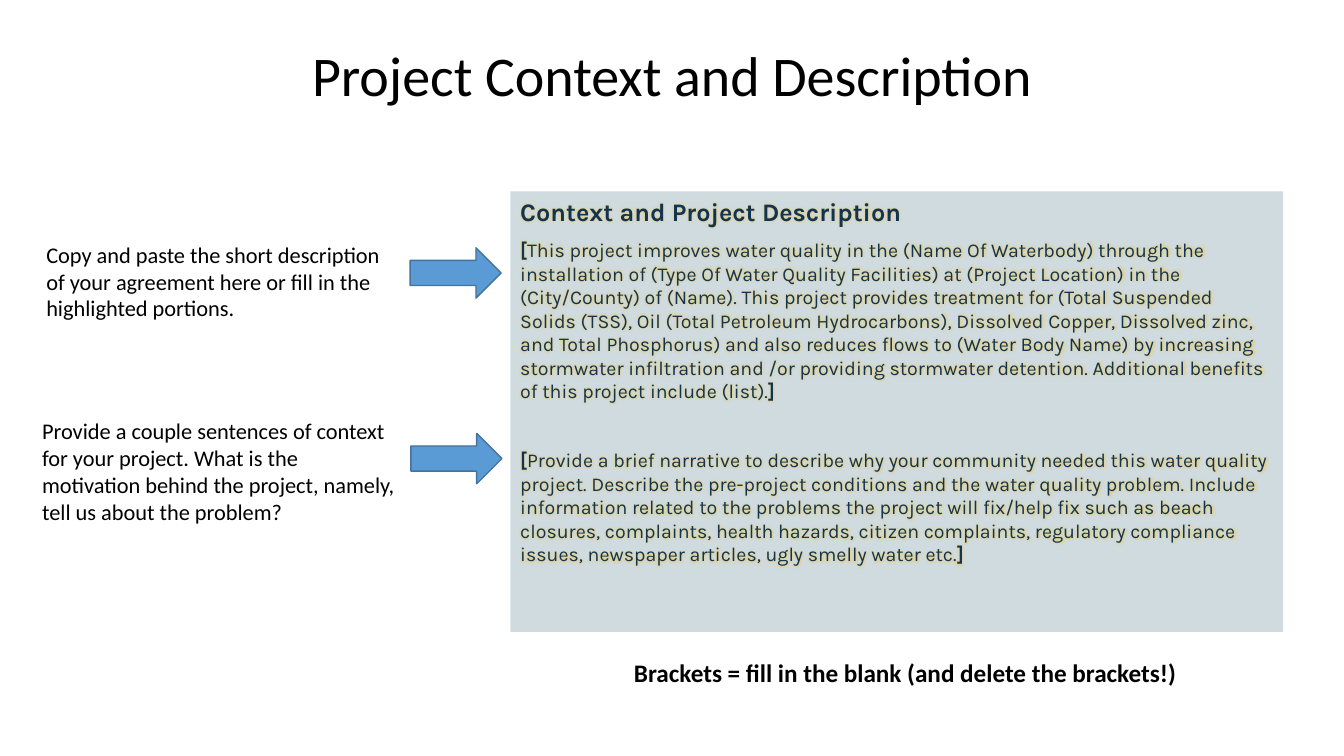
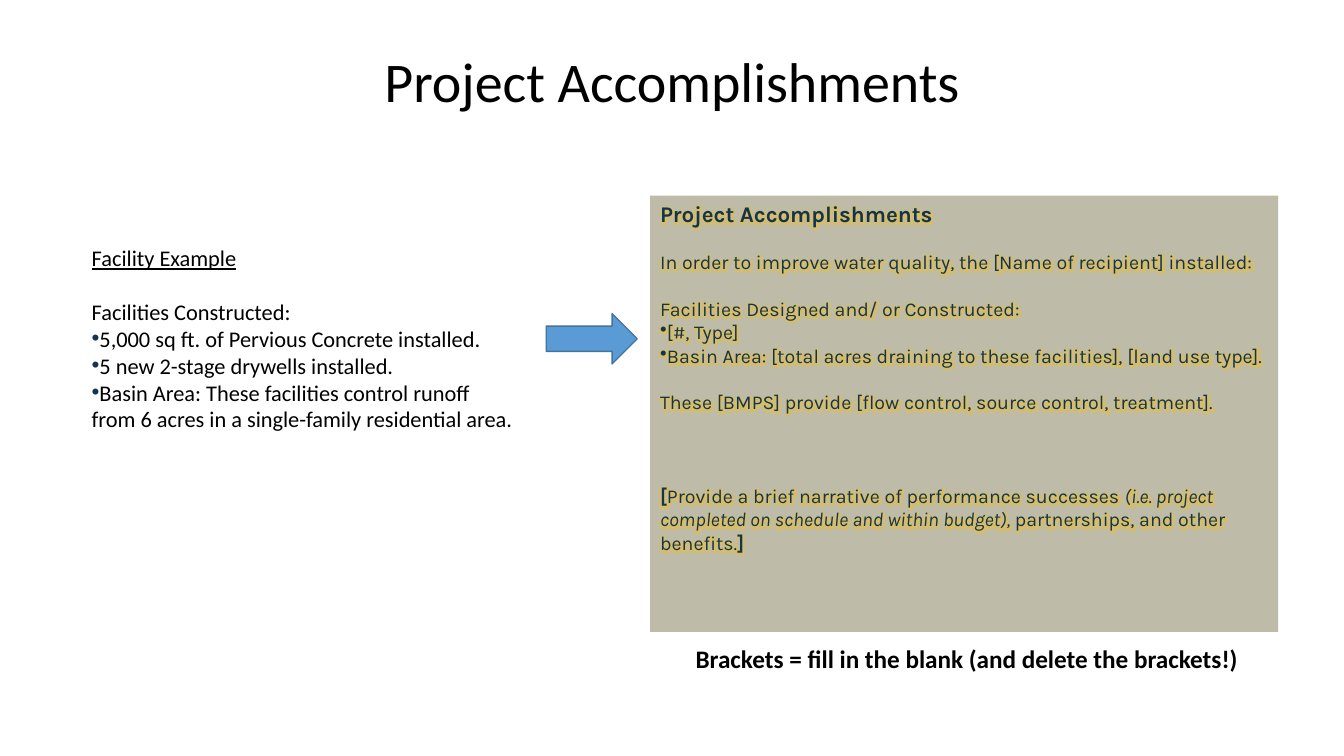
from lxml import etree
from pptx import Presentation
from pptx.dml.color import RGBColor
from pptx.enum.shapes import MSO_SHAPE as SHAPE
from pptx.enum.text import MSO_ANCHOR as ANCHOR, PP_ALIGN as ALIGN
from pptx.oxml import parse_xml
from pptx.oxml.ns import nsdecls, qn
from pptx.util import Pt

COLORS = {
    "text": "000000",
    "navy": "123452",
    "arrow": "5B9BD5",
    "arrow_line": "43739E",
    "glow": "FFC000",
    "blue_panel": "D0DBE0",
    "olive_panel": "BEBCA9",
}
GLOW = (f'<a:effectLst {nsdecls("a")}><a:glow rad="{Pt(5)}"><a:srgbClr val="{COLORS["glow"]}">'
        '<a:alpha val="40000"/></a:srgbClr></a:glow></a:effectLst>')
NOTE = dict(size=16)
PANEL = dict(size=14, font="Karla", color="navy", glow=True)


def rgb(name):
    return RGBColor.from_string(COLORS[name])


def add_para(tf, text, size=16, font="Calibri", color="text", bold=False, underline=False,
             align=ALIGN.LEFT, before=0, after=0, spacing=1.0, bullet=False, glow=False):
    """Add a paragraph; text is a string or a list of (text, style) with style "", "b" or "i"."""
    p = tf.paragraphs[0] if not tf.paragraphs[0].runs else tf.add_paragraph()
    p.alignment, p.line_spacing = align, spacing
    p.space_before, p.space_after = Pt(before), Pt(after)
    pPr = p._p.get_or_add_pPr()
    pPr.set("marL", "0")
    pPr.set("indent", "0")
    if bullet:
        clr = etree.SubElement(pPr, qn("a:buClr"))
        etree.SubElement(clr, qn("a:srgbClr"), val=COLORS["navy"])
        etree.SubElement(pPr, qn("a:buChar"), char="•")
    else:
        etree.SubElement(pPr, qn("a:buNone"))
    parts = [(text, "b" if bold else "")] if isinstance(text, str) else text
    for part, style in parts:
        r = p.add_run()
        r.text = part
        r.font.size, r.font.name = Pt(size), font
        r.font.bold, r.font.italic = style == "b", style == "i"
        r.font.underline = underline
        r.font.color.rgb = rgb(color)
        if glow:
            r.font._element.find(qn("a:solidFill")).addnext(parse_xml(GLOW))


prs = Presentation()
prs.slide_width, prs.slide_height = Pt(960), Pt(540)

# What differs between the slides: layout, title, panel, arrows, caption place
pages = [
    dict(layout=5, title="Project Context and Description", title_top=3.6,
         panel=(364.5, 136.8, 552, 314.6), fill="blue_panel",
         arrows=[(293, 177), (293.5, 309.6)], caption=(444, 466)),
    dict(layout=1, title="Project Accomplishments", title_top=8,
         panel=(464.4, 139.7, 448.6, 311.7), fill="olive_panel",
         arrows=[(390.2, 224)], caption=(488, 455.8)),
]

# Shared parts
slides, panels = [], []
for page in pages:
    s = prs.slides.add_slide(prs.slide_layouts[page["layout"]])
    slides.append(s)

    title = s.shapes.title
    title.left, title.top, title.width, title.height = Pt(66), Pt(page["title_top"]), Pt(828), Pt(104.4)
    title.text_frame.vertical_anchor = ANCHOR.MIDDLE
    add_para(title.text_frame, page["title"], size=40, align=ALIGN.CENTER, spacing=0.9)

    panel = s.shapes.add_shape(SHAPE.RECTANGLE, *map(Pt, page["panel"]))
    panel.shadow.inherit = False
    panel.fill.solid()
    panel.fill.fore_color.rgb = rgb(page["fill"])
    panel.line.fill.background()
    panel.text_frame.word_wrap = True
    panel.text_frame.vertical_anchor = ANCHOR.TOP
    panels.append(panel.text_frame)

    for x, y in page["arrows"]:
        arrow = s.shapes.add_shape(SHAPE.RIGHT_ARROW, Pt(x), Pt(y), Pt(65), Pt(36))
        arrow.shadow.inherit = False
        arrow.fill.solid()
        arrow.fill.fore_color.rgb = rgb("arrow")
        arrow.line.color.rgb = rgb("arrow_line")
        arrow.line.width = Pt(1)

    x, y = page["caption"]
    caption = s.shapes.add_textbox(Pt(x), Pt(y), Pt(405.4), Pt(29))
    caption.text_frame.word_wrap = False
    add_para(caption.text_frame, "Brackets = fill in the blank (and delete the brackets!)",
             size=18, bold=True, align=ALIGN.CENTER)

# Context slide: panel text
tf = panels[0]
add_para(tf, "Context and Project Description", **PANEL | dict(size=18, bold=True, after=8))
add_para(tf, [
    ("[", "b"),
    ("This project improves water quality in the (Name Of Waterbody) through the installation of "
     "(Type Of Water Quality Facilities) at (Project Location) in the (City/County) of (Name). "
     "This project provides treatment for (Total Suspended Solids (TSS), Oil (Total Petroleum "
     "Hydrocarbons), Dissolved Copper, Dissolved zinc, and Total Phosphorus) and also reduces "
     "flows to (Water Body Name) by increasing stormwater infiltration and /or providing "
     "stormwater detention. Additional benefits of this project include (list).", ""),
    ("]", "b")], after=32.4, **PANEL)
add_para(tf, [
    ("[", "b"),
    ("Provide a brief narrative to describe why your community needed this water quality project. "
     "Describe the pre-project conditions and the water quality problem. Include information "
     "related to the problems the project will fix/help fix such as beach closures, complaints, "
     "health hazards, citizen complaints, regulatory compliance issues, newspaper articles, "
     "ugly smelly water etc.", ""),
    ("]", "b")], **PANEL)

# Context slide: instructions beside the arrows
instructions = [
    (26, 168.5, 264.2, 65.5, "Copy and paste the short description of your agreement here or "
     "fill in the highlighted portions."),
    (23, 294.5, 270, 85, "Provide a couple sentences of context for your project. What is the "
     "motivation behind the project, namely, tell us about the problem?"),
]
for x, y, w, h, text in instructions:
    box = slides[0].shapes.add_textbox(Pt(x), Pt(y), Pt(w), Pt(h))
    box.text_frame.word_wrap = True
    add_para(box.text_frame, text, **NOTE)

# Accomplishments slide: panel text
tf = panels[1]
add_para(tf, "Project Accomplishments", **PANEL | dict(size=16, bold=True, after=16.4))
add_para(tf, "In order to improve water quality, the [Name of recipient] installed:", after=16.4, **PANEL)
add_para(tf, "Facilities Designed and/ or Constructed:", **PANEL)
add_para(tf, "[#, Type]", bullet=True, **PANEL)
add_para(tf, "Basin Area: [total acres draining to these facilities], [land use type].",
         bullet=True, after=16.4, **PANEL)
add_para(tf, "These [BMPS] provide [flow control, source control, treatment].", after=50, **PANEL)
add_para(tf, [
    ("[", "b"),
    ("Provide a brief narrative of performance successes ", ""),
    ("(i.e. project completed on schedule and within budget), ", "i"),
    ("partnerships, and other benefits.", ""),
    ("]", "b")], **PANEL)

# Accomplishments slide: example list
body = slides[1].placeholders[1]
body.left, body.top, body.width, body.height = Pt(58.3), Pt(170.6), Pt(319), Pt(143.3)
tf = body.text_frame
add_para(tf, "Facility Example", underline=True, after=19.5, **NOTE)
add_para(tf, "Facilities Constructed:", **NOTE)
for item in ("5,000 sq ft. of Pervious Concrete installed.",
             "5 new 2-stage drywells installed.",
             "Basin Area: These facilities control runoff from 6 acres in a single-family residential area."):
    add_para(tf, item, bullet=True, **NOTE)

prs.save("out.pptx")
